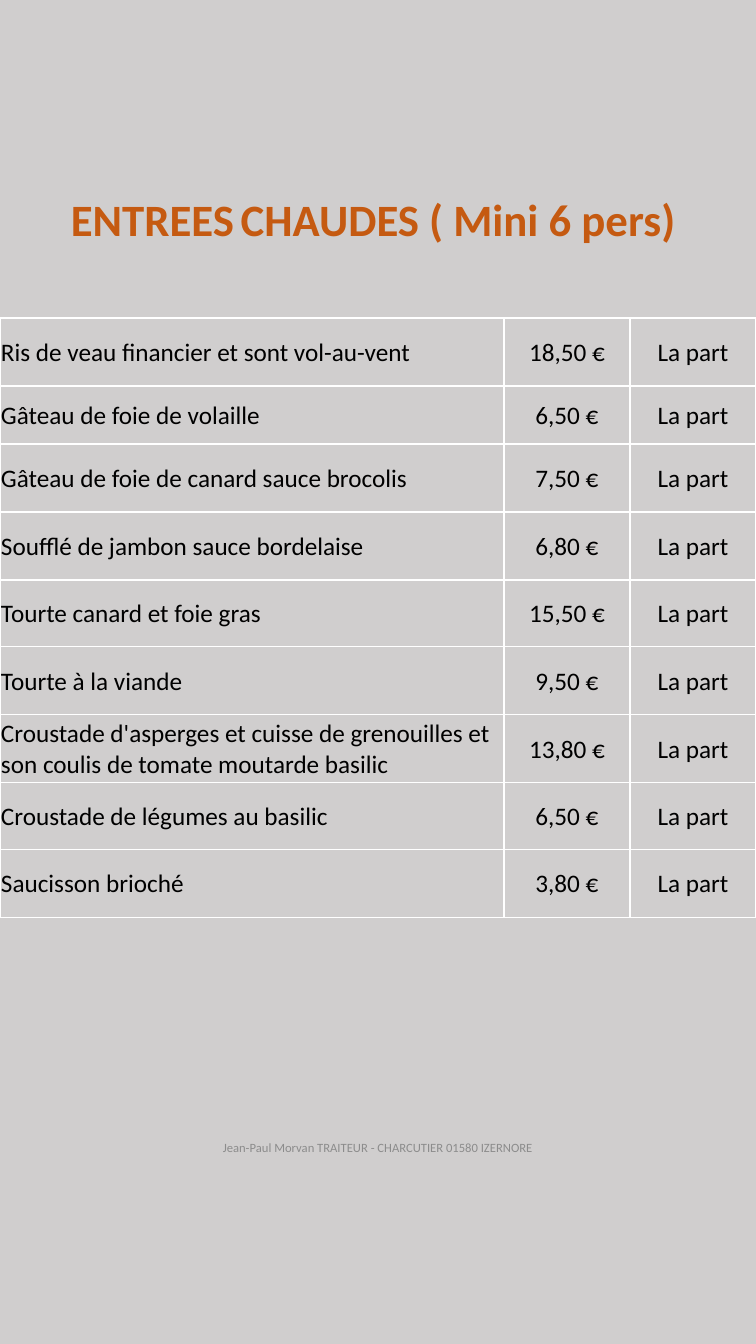
from lxml.etree import SubElement
from pptx import Presentation
from pptx.dml.color import RGBColor
from pptx.enum.text import MSO_ANCHOR, PP_ALIGN
from pptx.oxml.ns import qn
from pptx.util import Emu, Pt

HUES = {"back": "D0CECE", "line": "FFFFFF", "title": "C55A11", "text": "000000", "foot": "8C8C8C"}
COLS = (504, 126, 126)
ROWS = (68, 58, 68, 68, 67, 68, 68, 67, 68)
UNIT = "La part"
MENU = (
    ("Ris de veau financier et sont vol-au-vent", "18,50 €"),
    ("Gâteau de foie de volaille", "6,50 €"),
    ("Gâteau de foie de canard sauce brocolis", "7,50 €"),
    ("Soufflé de jambon sauce bordelaise", "6,80 €"),
    ("Tourte canard et foie gras", "15,50 €"),
    ("Tourte à la viande", "9,50 €"),
    ("Croustade d'asperges et cuisse de grenouilles et son coulis de tomate moutarde basilic", "13,80 €"),
    ("Croustade de légumes au basilic", "6,50 €"),
    ("Saucisson brioché", "3,80 €"),
)


def px(size):
    """Turn px into EMU."""
    return Emu(round(size * 914400 / 100.8))


def hue(name):
    """Look up a colour by name."""
    return RGBColor.from_string(HUES[name])


def apply(item, form):
    """Set each format value on an item."""
    for key, value in form.items():
        setattr(item, key, value)


def write(frame, runs, tint, align=PP_ALIGN.LEFT, bold=False):
    """Write runs of (text, points) as one paragraph."""
    para = frame.paragraphs[0]
    para.alignment = align
    for text, size in runs:
        run = para.add_run()
        run.text = text
        apply(run.font, {"name": "Calibri", "size": Pt(size), "bold": bold})
        run.font.color.rgb = hue(tint)


def add_text(slide, place, runs, tint, anchor, **form):
    """Add a wrapped text box."""
    frame = slide.shapes.add_textbox(*map(px, place)).text_frame
    apply(frame, {"word_wrap": True, "vertical_anchor": anchor})
    write(frame, runs, tint, **form)


def add_edges(cell):
    """Draw thin lines on all four sides of a cell."""
    props = cell._tc.get_or_add_tcPr()
    for side in "LRTB":
        line = SubElement(props, qn(f"a:ln{side}"), w=str(Pt(1)))
        fill = SubElement(line, qn("a:solidFill"))
        SubElement(fill, qn("a:srgbClr"), val=HUES["line"])


def fill_cell(cell, text, align):
    """Format one menu cell and write its text."""
    apply(cell, {
        "vertical_anchor": MSO_ANCHOR.MIDDLE,
        "margin_left": px(1), "margin_right": px(1),
        "margin_top": px(1), "margin_bottom": 0,
    })
    add_edges(cell)
    cell.fill.solid()
    cell.fill.fore_color.rgb = hue("back")
    write(cell.text_frame, [(text, 18)], "text", align)


def add_menu(slide, left, top):
    """Add the table of dishes and prices."""
    place = map(px, (left, top, sum(COLS), sum(ROWS)))
    table = slide.shapes.add_table(len(ROWS), len(COLS), *place).table
    apply(table, {"first_row": False, "horz_banding": False})
    for col, width in zip(table.columns, COLS):
        col.width = px(width)
    for row, height, dish in zip(table.rows, ROWS, MENU):
        row.height = px(height)
        for i, text in enumerate((*dish, UNIT)):
            fill_cell(row.cells[i], text, PP_ALIGN.CENTER if i else PP_ALIGN.LEFT)


def main():
    """Build the menu slide."""
    deck = Presentation()
    apply(deck, {"slide_width": px(756), "slide_height": px(1344)})
    slide = deck.slides.add_slide(deck.slide_layouts[6])
    slide.background.fill.solid()
    slide.background.fill.fore_color.rgb = hue("back")
    add_text(slide, (167, 1112, 421, 72),
             [("Jean-Paul Morvan TRAITEUR - CHARCUTIER 01580 IZERNORE", 9)],
             "foot", MSO_ANCHOR.MIDDLE, align=PP_ALIGN.CENTER)
    add_text(slide, (61, 187, 634, 65),
             [("ENTREES", 32), (" ", 20), ("CHAUDES ( Mini 6 pers)", 32)],
             "title", MSO_ANCHOR.TOP, bold=True)
    add_menu(slide, 0, 318)
    deck.save("out.pptx")


if __name__ == "__main__":
    main()
